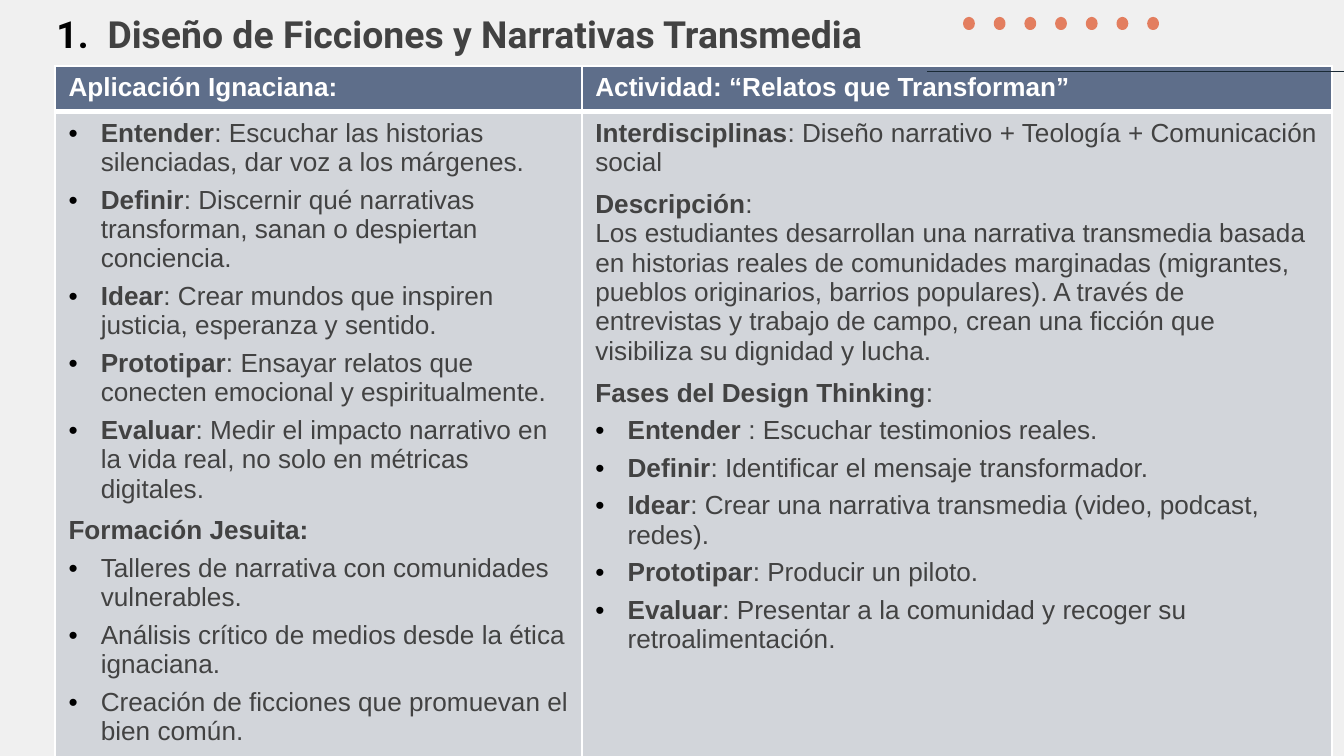
from lxml.etree import SubElement
from pptx import Presentation
from pptx.dml.color import RGBColor
from pptx.enum.shapes import MSO_CONNECTOR, MSO_SHAPE
from pptx.enum.text import MSO_ANCHOR, PP_ALIGN
from pptx.oxml.ns import qn
from pptx.util import Inches, Pt

BACKGROUND = RGBColor(0xF0, 0xF0, 0xF0)
TEXT = RGBColor(0x42, 0x42, 0x42)
WHITE = RGBColor(0xFF, 0xFF, 0xFF)
BLACK = RGBColor(0x00, 0x00, 0x00)
HEADER = RGBColor(0x5E, 0x6E, 0x8A)
BODY = RGBColor(0xD2, 0xD5, 0xDA)
ORANGE = RGBColor(0xE3, 0x7E, 0x5F)
NAVY = RGBColor(0x1A, 0x2A, 0x35)

TITLE = "Diseño de Ficciones y Narrativas Transmedia"
HEADINGS = ["Aplicación Ignaciana:", "Actividad: “Relatos que Transforman”"]
APPLICATION = [
    ("•", "Entender", ": Escuchar las historias silenciadas, dar voz a los márgenes."),
    ("•", "Definir", ": Discernir qué narrativas transforman, sanan o despiertan conciencia."),
    ("•", "Idear", ": Crear mundos que inspiren justicia, esperanza y sentido."),
    ("•", "Prototipar", ": Ensayar relatos que conecten emocional y espiritualmente."),
    ("•", "Evaluar", ": Medir el impacto narrativo en la vida real, no solo en métricas digitales."),
    ("", "Formación Jesuita:", ""),
    ("•", "", "Talleres de narrativa con comunidades vulnerables."),
    ("•", "", "Análisis crítico de medios desde la ética ignaciana."),
    ("•", "", "Creación de ficciones que promuevan el bien común."),
]
ACTIVITY = [
    ("", "Interdisciplinas", ": Diseño narrativo + Teología + Comunicación social"),
    ("", "Descripción", ":\nLos estudiantes desarrollan una narrativa transmedia basada en historias "
     "reales de comunidades marginadas (migrantes, pueblos originarios, barrios populares). A través de "
     "entrevistas y trabajo de campo, crean una ficción que visibiliza su dignidad y lucha."),
    ("", "Fases del Design Thinking", ":"),
    ("•", "Entender ", ": Escuchar testimonios reales."),
    ("•", "Definir", ": Identificar el mensaje transformador."),
    ("•", "Idear", ": Crear una narrativa transmedia (video, podcast, redes)."),
    ("•", "Prototipar", ": Producir un piloto."),
    ("•", "Evaluar", ": Presentar a la comunidad y recoger su retroalimentación."),
]


def add_bullet(paragraph, indent, font, tag, **attributes):
    """Give a paragraph a hanging indent and a black bullet or number."""
    properties = paragraph._p.get_or_add_pPr()
    properties.set("marL", str(Inches(indent)))
    properties.set("indent", str(-Inches(indent)))
    color = SubElement(properties, qn("a:buClr"))
    SubElement(color, qn("a:srgbClr"), val=str(BLACK))
    SubElement(properties, qn("a:buFont"), typeface=font)
    SubElement(properties, qn(tag), **attributes)


def format_run(run, size, name, color, bold):
    """Set the font of a run."""
    font = run.font
    font.size, font.name, font.bold = Pt(size), name, bold
    font.color.rgb = color


def add_title(slide, left, top, width, height):
    """Fill and place the numbered title."""
    title = slide.shapes.title
    title.left, title.top = Inches(left), Inches(top)
    title.width, title.height = Inches(width), Inches(height)
    frame = title.text_frame
    frame.text = TITLE
    frame.word_wrap = True
    frame.vertical_anchor = MSO_ANCHOR.TOP
    paragraph = frame.paragraphs[0]
    paragraph.alignment = PP_ALIGN.LEFT
    paragraph.line_spacing = Pt(18)
    paragraph.space_before = Pt(0)
    add_bullet(paragraph, 0.38, "Roboto", "a:buAutoNum", type="arabicPeriod")
    format_run(paragraph.runs[0], 20, "Roboto", TEXT, True)


def style_cell(cell, color, top, bottom):
    """Give a cell white borders and a solid fill."""
    properties = cell._tc.get_or_add_tcPr()
    for side, weight in zip("LRTB", (1, 1, top, bottom)):
        line = SubElement(properties, qn(f"a:ln{side}"), w=str(Pt(weight)))
        fill = SubElement(line, qn("a:solidFill"))
        SubElement(fill, qn("a:srgbClr"), val=str(WHITE))
    cell.fill.solid()
    cell.fill.fore_color.rgb = color


def fill_cell(cell, items, color):
    """Write (bullet, bold lead, plain text) items into a cell."""
    frame = cell.text_frame
    for index, (bullet, lead, rest) in enumerate(items):
        paragraph = frame.add_paragraph() if index else frame.paragraphs[0]
        paragraph.space_before = Pt(0 if not index else 2.2 if bullet else 4.5)
        paragraph.space_after = Pt(2.2 if len(items) > 1 else 0)
        if bullet:
            add_bullet(paragraph, 0.24, "Arial", "a:buChar", char=bullet)
        if lead:
            run = paragraph.add_run()
            run.text = lead
            format_run(run, 14, "Arial", color, True)
        for number, line in enumerate(rest.split("\n") if rest else []):
            if number:
                paragraph.add_line_break()
                SubElement(paragraph._p[-1], qn("a:rPr"), sz="1400")
            run = paragraph.add_run()
            run.text = line
            format_run(run, 14, "Arial", color, False)


def add_activity_table(slide, left, top, widths, heights):
    """Add the two-column table."""
    table = slide.shapes.add_table(
        2, 2, Inches(left), Inches(top), Inches(sum(widths)), Inches(sum(heights))).table
    for row, height in zip(table.rows, heights):
        row.height = Inches(height)
    for index, (width, heading, items) in enumerate(zip(widths, HEADINGS, (APPLICATION, ACTIVITY))):
        table.columns[index].width = Inches(width)
        header, body = table.cell(0, index), table.cell(1, index)
        style_cell(header, HEADER, 1, 3)
        fill_cell(header, [("", heading, "")], WHITE)
        style_cell(body, BODY, 3, 1)
        fill_cell(body, items, TEXT)


def add_decoration(slide, left, top, width):
    """Add the row of dots above a thin line."""
    for index in range(7):
        dot = slide.shapes.add_shape(
            MSO_SHAPE.OVAL, Inches(left + 0.28 + index * 1.37 / 6), Inches(top),
            Inches(0.06), Inches(0.07))
        dot.shadow.inherit = False
        dot.fill.solid()
        dot.fill.fore_color.rgb = ORANGE
        dot.line.color.rgb = ORANGE
        dot.line.width = Pt(2)
    line_top = Inches(top + 0.39)
    line = slide.shapes.add_connector(
        MSO_CONNECTOR.STRAIGHT, Inches(left), line_top, Inches(left + width), line_top)
    line.line.color.rgb = NAVY
    line.line.width = Pt(0.75)
    SubElement(line._element.spPr, qn("a:effectLst"))


def main():
    """Build and save the presentation."""
    presentation = Presentation()
    presentation.slide_width = Inches(10)
    presentation.slide_height = Inches(10 * 9 / 16)
    slide = presentation.slides.add_slide(presentation.slide_layouts[5])
    slide.background.fill.solid()
    slide.background.fill.fore_color.rgb = BACKGROUND
    add_title(slide, 0.32, 0.12, 9.58, 0.35)
    add_activity_table(slide, 0.41, 0.49, (3.92, 5.58), (0.34, 4.8))
    add_decoration(slide, 6.9, 0.14, 3.1)
    presentation.save("out.pptx")


if __name__ == "__main__":
    main()
